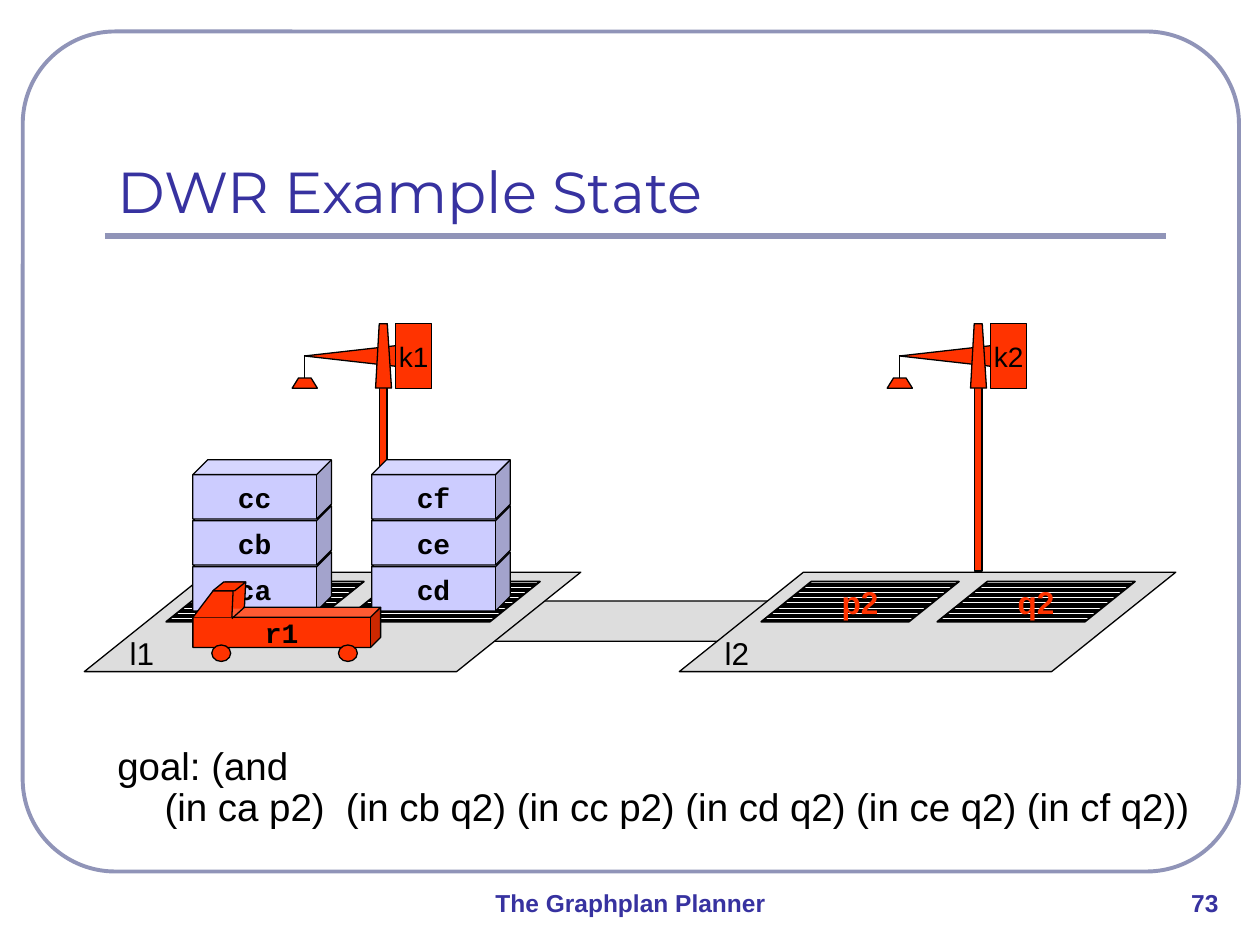
from pptx import Presentation
from pptx.dml.color import RGBColor
from pptx.enum.dml import MSO_PATTERN
from pptx.enum.shapes import MSO_CONNECTOR, MSO_SHAPE
from pptx.enum.text import MSO_ANCHOR, MSO_AUTO_SIZE, PP_ALIGN
from pptx.oxml.ns import qn
from pptx.util import Pt

RECT, CUBE, OVAL = MSO_SHAPE.RECTANGLE, MSO_SHAPE.CUBE, MSO_SHAPE.OVAL
ROUND, SLANT = MSO_SHAPE.ROUNDED_RECTANGLE, MSO_SHAPE.PARALLELOGRAM
TRI = MSO_SHAPE.ISOSCELES_TRIANGLE
STRIPES = MSO_PATTERN.DARK_HORIZONTAL
STRAIGHT = MSO_CONNECTOR.STRAIGHT
LEFT, MID = PP_ALIGN.LEFT, PP_ALIGN.CENTER
TOP, CENTER, BOTTOM = MSO_ANCHOR.TOP, MSO_ANCHOR.MIDDLE, MSO_ANCHOR.BOTTOM
FIXED = MSO_AUTO_SIZE.NONE

BLACK, WHITE, RED = "000000", "FFFFFF", "FF3300"
NAVY, FRAME, GREY, LILAC = "3732A0", "9094B8", "DDDDDD", "CCCCFF"
SANS, MONO, HEAD = "Arial", "Courier New", "Montserrat"
SHIFT = 340  # distance between the two locations


def color(text):
    return RGBColor.from_string(text)


class Board:
    """Holds the line style and the slide being drawn."""

    def __init__(self, slide, ink=BLACK, width=0.75):
        self.slide, self.shapes = slide, slide.shapes
        self.ink, self.width = ink, width

    def finish(self, item, fill, ink=None, width=None):
        item.shadow.inherit = False
        if fill:
            item.fill.solid()
            item.fill.fore_color.rgb = color(fill)
        else:
            item.fill.background()
        item.line.color.rgb = color(ink or self.ink)
        item.line.width = Pt(width or self.width)
        return item

    def shape(self, kind, box, fill=None, adj=None, ink=None, width=None):
        item = self.shapes.add_shape(kind, *map(Pt, box))
        if adj is not None:
            item.adjustments[0] = adj
        return self.finish(item, fill, ink, width)

    def outline(self, points, fill, close=True):
        start, *rest = [(Pt(x), Pt(y)) for x, y in points]
        pen = self.shapes.build_freeform(*start)
        pen.add_line_segments(rest, close=close)
        return self.finish(pen.convert_to_shape(), fill)

    def line(self, start, end, ink=None, width=None):
        item = self.shapes.add_connector(STRAIGHT, *map(Pt, start + end))
        item.line.color.rgb = color(ink or self.ink)
        item.line.width = Pt(width or self.width)
        props = item._element.spPr
        props.append(props.makeelement(qn("a:effectLst"), {}))

    def label(self, item, text, size, font=SANS, ink=BLACK, bold=False,
              align=MID, anchor=CENTER, wrap=False):
        frame = item.text_frame
        frame.text = text
        frame.auto_size = FIXED
        frame.word_wrap, frame.vertical_anchor = wrap, anchor
        para = frame.paragraphs[0]
        para.alignment = align
        para.font.name, para.font.size = font, Pt(size)
        para.font.bold, para.font.color.rgb = bold, color(ink)
        return para

    def text(self, box, text, size, **style):
        item = self.shapes.add_textbox(*map(Pt, box))
        return self.label(item, text, size, anchor=TOP, wrap=True, **style)

    def title(self, box, text):
        item = self.shapes.title
        item.left, item.top, item.width, item.height = map(Pt, box)
        self.label(item, text, 33, HEAD, NAVY, align=LEFT, anchor=BOTTOM,
                   wrap=True)

    def place(self, x, name):
        self.shape(SLANT, (x, 327, 283.7, 56.8), GREY, 1.249)
        self.text((x + 18.8, 358.6, 32.4, 28.8), name, 18, align=LEFT)

    def crane(self, x, name):
        boom = self.shape(TRI, (x + 27.9, 176.4, 12.2, 54), RED)
        boom.rotation = 270
        self.line((x + 7.2, 221.8), (x + 7.2, 203))
        self.shape(RECT, (x + 49.7, 203, 4.5, 123.3), RED)
        self.outline([(x + 47.6, 221.8), (x + 49.7, 185),
                      (x + 54.3, 185), (x + 56.7, 221.8)], RED)
        cab = self.shape(RECT, (x + 59.1, 185, 20.7, 37.2), RED)
        self.label(cab, name, 16)
        self.outline([(x, 221.8), (x + 3.6, 216),
                      (x + 10.8, 216), (x + 14.4, 221.8)], RED)

    def pallet(self, x, name=None):
        item = self.shape(SLANT, (x, 332.3, 113, 23), adj=1.246, width=1)
        item.fill.patterned()
        item.fill.pattern = STRIPES
        item.fill.fore_color.rgb = color(BLACK)
        item.fill.back_color.rgb = color(WHITE)
        if name:
            self.label(item, name, 18, ink=RED, bold=True)

    def block(self, box, name, fill):
        item = self.shape(CUBE, box, fill, 0.25)
        self.label(item, name, 16, MONO, bold=True)

    def pile(self, x, names):
        """Stack crates, the first name at the bottom."""
        for row, name in enumerate(names):
            self.block((x, 315.4 - 26.3 * row, 79.2, 33.8), name, LILAC)

    def truck(self, x, name):
        self.outline([(x + 7.2, 347.8), (x + 18.7, 332.6),
                      (x + 30.2, 332.6), (x + 29.5, 347)], RED, close=False)
        self.block((x, 347, 107.3, 23), name, RED)
        self.shape(SLANT, (x + 11.5, 332.6, 18.7, 5), RED, 1.236)
        patch = self.shape(RECT, (x + 23, 345.6, 5.8, 2.2), RED)
        patch.line.fill.background()
        self.outline([(x, 352.8), (x + 11.5, 337.7),
                      (x + 23, 337.7), (x + 22.3, 352.8)], RED, close=False)
        self.line((x + 22.3, 353.5), (x + 29.5, 347))
        for gap in (10.8, 83.2):
            self.shape(OVAL, (x + gap, 368.6, 10.8, 9.4), RED)


def main():
    deck = Presentation()
    deck.slide_width, deck.slide_height = Pt(720), Pt(540)
    board = Board(deck.slides.add_slide(deck.slide_layouts[5]))

    board.shape(ROUND, (13, 18, 695, 480), adj=0.11, ink=FRAME, width=2.25)
    board.line((60, 134.8), (666, 134.8), FRAME, 3)
    board.title((60, 42, 606, 90), "DWR Example State")
    for x, width, text in ((190, 340.6, "The Graphplan Planner"),
                           (660, 57, "73")):
        board.text((x, 504, width, 36), text, 14, ink=NAVY, bold=True)

    board.shape(SLANT, (257.8, 343.4, 203.8, 23), GREY, 2.242)
    sites = (("l1", "k1", None, None), ("l2", "k2", "p2", "q2"))
    for index, (site, crane, near, far) in enumerate(sites):
        shift = SHIFT * index
        board.place(48.2 + shift, site)
        board.crane(167 + shift, crane)
        board.pallet(195.6 + shift, far)
        board.pallet(95 + shift, near)
    board.pile(110.2, ("ca", "cb", "cc"))
    board.pile(212.4, ("cd", "ce", "cf"))
    board.truck(110.2, "r1")

    goal = board.text(
        (60, 423.4, 640, 67.7),
        "goal: (and \v(in ca p2)  (in cb q2) (in cc p2) (in cd q2) "
        "(in ce q2) (in cf q2))", 22, align=LEFT)
    goal.line_spacing, goal.space_before = 0.9, Pt(2)
    props = goal._p.get_or_add_pPr()
    props.set("marL", str(Pt(27)))
    props.set("indent", str(Pt(-27)))

    deck.save("out.pptx")


if __name__ == "__main__":
    main()
